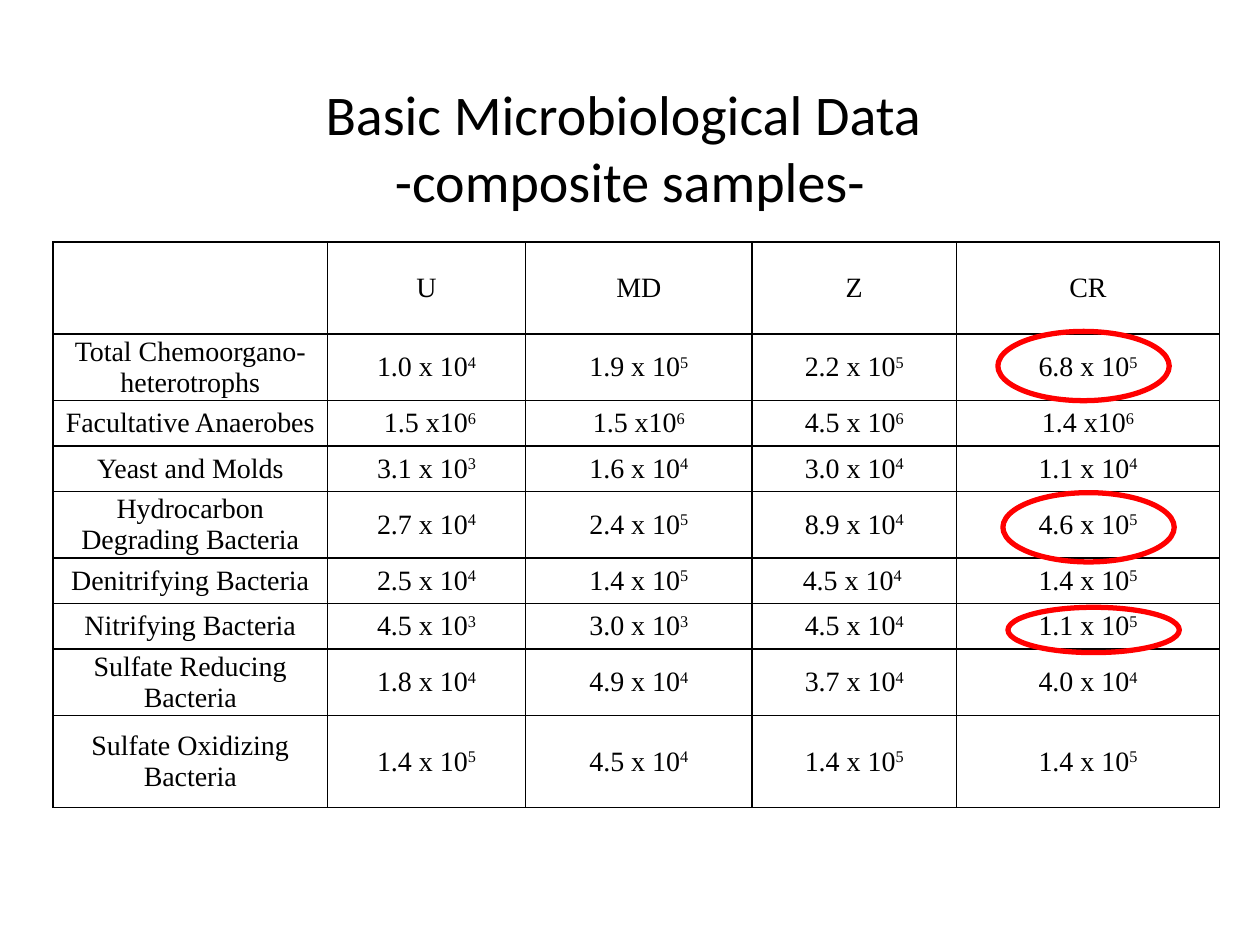
from pptx import Presentation
from pptx.dml.color import RGBColor
from pptx.enum.shapes import MSO_SHAPE
from pptx.enum.text import MSO_ANCHOR, PP_ALIGN
from pptx.oxml import parse_xml
from pptx.oxml.ns import nsdecls
from pptx.util import Inches, Pt

TITLE = "Basic Microbiological Data \n-composite samples-"
# "^" marks the start of an exponent
ROWS = [
    ("", "U", "MD", "Z", "CR"),
    ("Total Chemoorgano-heterotrophs", "1.0 x 10^4", "1.9 x 10^5", "2.2 x 10^5", "6.8 x 10^5"),
    ("Facultative Anaerobes", " 1.5 x10^6", "1.5 x10^6", "4.5 x 10^6", "1.4 x10^6"),
    ("Yeast and Molds", "3.1 x 10^3", "1.6 x 10^4", "3.0 x 10^4", "1.1 x 10^4"),
    ("Hydrocarbon Degrading Bacteria", "2.7 x 10^4", "2.4 x 10^5", "8.9 x 10^4", "4.6 x 10^5"),
    ("Denitrifying Bacteria", "2.5 x 10^4", "1.4 x 10^5", "4.5 x 10^4 ", "1.4 x 10^5"),
    ("Nitrifying Bacteria", "4.5 x 10^3", "3.0 x 10^3", "4.5 x 10^4", "1.1 x 10^5"),
    ("Sulfate Reducing Bacteria", "1.8 x 10^4", "4.9 x 10^4", "3.7 x 10^4", "4.0 x 10^4"),
    ("Sulfate Oxidizing Bacteria", "1.4 x 10^5", "4.5 x 10^4", "1.4 x 10^5", "1.4 x 10^5"),
]
COL_WIDTHS = [2.18, 1.57, 1.8, 1.62, 2.09]
TALL, DOUBLE, SINGLE = 0.73, 0.53, 0.36
ROW_HEIGHTS = [TALL, DOUBLE, SINGLE, SINGLE, DOUBLE, SINGLE, SINGLE, DOUBLE, TALL]
HIGHLIGHTS = [(7.92, 2.63, 0.55), (7.96, 3.91, 0.55), (8, 4.82, 0.36)]  # left, top, height
HIGHLIGHT_WIDTH = 1.36
BLACK, RED = "000000", "FF0000"


def rgb(color):
    return RGBColor.from_string(color)


def style(font, name, size):
    font.name, font.size, font.bold = name, Pt(size), False
    font.color.rgb = rgb(BLACK)


def add_borders(cell):
    for side in ("lnL", "lnR", "lnT", "lnB"):
        cell._tc.get_or_add_tcPr().append(parse_xml(
            f'<a:{side} {nsdecls("a")} w="{Pt(1)}"><a:solidFill>'
            f'<a:srgbClr val="{BLACK}"/></a:solidFill></a:{side}>'))


def fill_cell(cell, content):
    cell.margin_left = cell.margin_right = Inches(0.07)
    cell.margin_top = cell.margin_bottom = 0
    cell.vertical_anchor = MSO_ANCHOR.MIDDLE
    add_borders(cell)
    cell.fill.background()
    p = cell.text_frame.paragraphs[0]
    p.alignment = PP_ALIGN.CENTER
    style(p.font, "Times New Roman", 16)
    if not content:
        return
    for i, part in enumerate(content.split("^")):
        r = p.add_run()
        r.text = part
        style(r.font, "Times New Roman", 16)
        if i:
            r.font._element.set("baseline", "30000")


def add_title(s):
    title = s.shapes.title
    title.left, title.top = Inches(0), Inches(0.58)
    title.width, title.height = Inches(10), Inches(1.18)
    tf = title.text_frame
    tf.text = TITLE
    tf.vertical_anchor = MSO_ANCHOR.TOP
    for p in tf.paragraphs:
        p.alignment = PP_ALIGN.CENTER
        for r in p.runs:
            style(r.font, "Calibri", 32)


def add_data_table(s):
    frame = s.shapes.add_table(len(ROWS), len(COL_WIDTHS), Inches(0.42), Inches(1.92),
                               Inches(sum(COL_WIDTHS)), Inches(sum(ROW_HEIGHTS)))
    table = frame.table
    table.first_row = table.horz_banding = False
    for col, width in zip(table.columns, COL_WIDTHS):
        col.width = Inches(width)
    for row, height, contents in zip(table.rows, ROW_HEIGHTS, ROWS):
        row.height = Inches(height)
        for cell, content in zip(row.cells, contents):
            fill_cell(cell, content)


def add_highlights(s):
    for left, top, height in HIGHLIGHTS:
        ring = s.shapes.add_shape(MSO_SHAPE.OVAL, Inches(left), Inches(top),
                                  Inches(HIGHLIGHT_WIDTH), Inches(height))
        ring.shadow.inherit = False
        ring.fill.background()
        ring.line.color.rgb = rgb(RED)
        ring.line.width = Pt(3)


def main():
    prs = Presentation()
    prs.slide_width, prs.slide_height = Inches(10), Inches(7.5)
    s = prs.slides.add_slide(prs.slide_layouts[5])
    add_title(s)
    add_data_table(s)
    add_highlights(s)
    prs.save("out.pptx")


if __name__ == "__main__":
    main()
